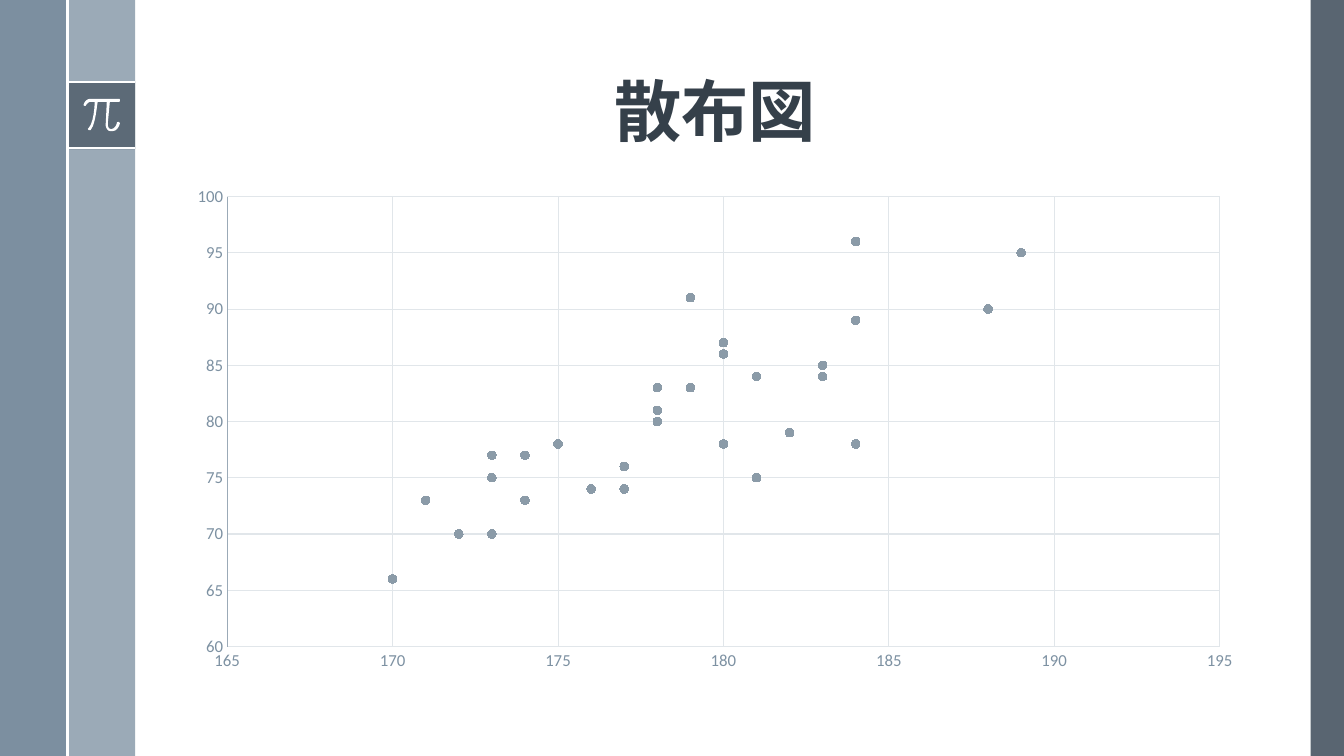
from dataclasses import dataclass

import pptx
import pptx.chart.data
import pptx.dml.color
import pptx.enum.chart
import pptx.enum.shapes
import pptx.enum.text
import pptx.oxml
import pptx.oxml.ns
import pptx.util
from pptx.util import Inches, Pt


@dataclass(frozen=True)
class Theme:
    title_font: str = "Noto Sans CJK JP"
    chart_font: str = "Calibri"
    title_size: int = 48
    label_size: int = 12
    marker_size: int = 6
    white: str = "FFFFFF"
    slate: str = "475562"
    steel: str = "6A8093"
    mist: str = "9BAAB7"
    title: str = "35404A"
    label: str = "7D91A2"
    grid: str = "E1E6EA"
    marker: str = "8B9BA8"


THEME = Theme()
BAND = 0.67
CONTENT_LEFT, CONTENT_WIDTH = 1.74, 10.7

POINTS = [
    (179, 91), (183, 84), (177, 74), (173, 75), (178, 83), (184, 78),
    (189, 95), (176, 74), (183, 85), (181, 75), (184, 96), (184, 89),
    (174, 77), (177, 76), (173, 70), (188, 90), (182, 79), (181, 84),
    (180, 86), (173, 77), (178, 80), (180, 78), (180, 87), (171, 73),
    (178, 81), (175, 78), (170, 66), (179, 83), (174, 73), (172, 70),
]

# Each step holds the points after the current one: one for a straight
# edge, three for a cubic curve (two controls and an end).
PI_START = (1.18, 0.98)
PI_STEPS = [
    [(0.9, 0.98)],
    [(0.85, 0.98), (0.83, 1.03), (0.83, 1.04)],
    [(0.83, 1.04), (0.83, 1.05), (0.84, 1.05)],
    [(0.85, 1.05)],
    [(0.85, 1.05), (0.87, 1.01), (0.9, 1.01)],
    [(0.94, 1.01)],
    [(0.94, 1.05), (0.93, 1.22), (0.88, 1.27)],
    [(0.87, 1.28), (0.87, 1.28), (0.88, 1.29)],
    [(0.88, 1.29), (0.89, 1.29), (0.9, 1.29)],
    [(0.95, 1.23), (0.96, 1.05), (0.97, 1.01)],
    [(1.06, 1.01)],
    [(1.05, 1.22)],
    [(1.05, 1.22), (1.04, 1.26), (1.07, 1.29)],
    [(1.08, 1.3), (1.09, 1.3), (1.1, 1.3)],
    [(1.11, 1.3), (1.11, 1.3), (1.12, 1.3)],
    [(1.17, 1.3), (1.19, 1.23), (1.19, 1.22)],
    [(1.19, 1.22), (1.18, 1.21), (1.18, 1.21)],
    [(1.17, 1.21), (1.16, 1.21), (1.16, 1.22)],
    [(1.16, 1.22), (1.15, 1.27), (1.11, 1.28)],
    [(1.1, 1.28), (1.09, 1.28), (1.08, 1.27)],
    [(1.07, 1.26), (1.07, 1.23), (1.07, 1.22)],
    [(1.09, 1.01)],
    [(1.18, 1.01)],
    [(1.19, 1.01), (1.19, 1), (1.19, 1)],
    [(1.19, 0.99), (1.19, 0.98), (1.18, 0.98)],
]


def rgb(color):
    return pptx.dml.color.RGBColor.from_string(color)


def paint(shape, color, opacity=100):
    shape.shadow.inherit = False
    shape.fill.solid()
    shape.fill.fore_color.rgb = rgb(color)
    shape.line.fill.background()
    if opacity < 100:
        srgb = shape.fill._xPr.find(".//" + pptx.oxml.ns.qn("a:srgbClr"))
        alpha = srgb.makeelement(pptx.oxml.ns.qn("a:alpha"), {"val": str(opacity * 1000)})
        srgb.append(alpha)


def add_band(slide, left, top, width, height, color, opacity=100):
    band = slide.shapes.add_shape(
        pptx.enum.shapes.MSO_SHAPE.RECTANGLE,
        Inches(left), Inches(top), Inches(width), Inches(height))
    paint(band, color, opacity)


def add_rule(slide, *ends):
    rule = slide.shapes.add_connector(
        pptx.enum.shapes.MSO_CONNECTOR.STRAIGHT, *map(Inches, ends))
    rule.line.color.rgb = rgb(THEME.white)
    rule.line.width = Pt(1.5)
    properties = rule._element.spPr
    properties.append(properties.makeelement(pptx.oxml.ns.qn("a:effectLst"), {}))


def curve_points(p0, p1, p2, p3, pieces=6):
    """Sample a cubic curve, leaving out its first point."""
    for step in range(1, pieces + 1):
        t = step / pieces
        u = 1 - t
        weights = (u**3, 3 * u * u * t, 3 * u * t * t, t**3)
        yield tuple(sum(w * c for w, c in zip(weights, axis))
                    for axis in zip(p0, p1, p2, p3))


def add_pi(slide):
    outline = [PI_START]
    for step in PI_STEPS:
        outline.extend(step if len(step) == 1 else curve_points(outline[-1], *step))
    builder = slide.shapes.build_freeform(
        Inches(PI_START[0]), Inches(PI_START[1]))
    builder.add_line_segments([(Inches(x), Inches(y)) for x, y in outline[1:]])
    paint(builder.convert_to_shape(), THEME.white)


def add_title(slide, wording):
    title = slide.shapes.title
    title.left, title.top = Inches(CONTENT_LEFT), Inches(0.19)
    title.width, title.height = Inches(CONTENT_WIDTH), Inches(1.36)
    frame = title.text_frame
    frame.text = wording
    frame.vertical_anchor = pptx.enum.text.MSO_ANCHOR.BOTTOM
    paragraph = frame.paragraphs[0]
    paragraph.alignment = pptx.enum.text.PP_ALIGN.CENTER
    paragraph.line_spacing = 0.9
    font = paragraph.runs[0].font
    font.name, font.size, font.bold = THEME.title_font, Pt(THEME.title_size), True
    font.color.rgb = rgb(THEME.title)
    latin = font._element.find(pptx.oxml.ns.qn("a:latin"))
    latin.addnext(latin.makeelement(
        pptx.oxml.ns.qn("a:ea"), {"typeface": THEME.title_font}))


def style_axis(axis, low, high, line_color, line_width):
    axis.minimum_scale, axis.maximum_scale, axis.major_unit = low, high, 5
    axis.major_tick_mark = axis.minor_tick_mark = pptx.enum.chart.XL_TICK_MARK.NONE
    axis.format.line.color.rgb = rgb(line_color)
    axis.format.line.width = Pt(line_width)
    axis.has_major_gridlines = True
    axis.major_gridlines.format.line.color.rgb = rgb(THEME.grid)
    axis.major_gridlines.format.line.width = Pt(0.75)
    axis.tick_labels.number_format = "General"
    axis.tick_labels.number_format_is_linked = False


def place_plot(chart, **fractions):
    """Fix the inner plot area as fractions of the chart."""
    plot_area = chart._chartSpace.chart.plotArea
    for layout in plot_area.findall(pptx.oxml.ns.qn("c:layout")):
        plot_area.remove(layout)
    settings = {"layoutTarget": "inner", "xMode": "edge", "yMode": "edge", **fractions}
    children = "".join(f'<c:{key} val="{val}"/>' for key, val in settings.items())
    plot_area.insert(0, pptx.oxml.parse_xml(
        f'<c:layout {pptx.oxml.ns.nsdecls("c")}>'
        f"<c:manualLayout>{children}</c:manualLayout></c:layout>"))


def add_scatter(slide):
    data = pptx.chart.data.XyChartData()
    measurements = data.add_series("Series 1")
    for x, y in POINTS:
        measurements.add_data_point(x, y)
    chart = slide.shapes.add_chart(
        pptx.enum.chart.XL_CHART_TYPE.XY_SCATTER,
        Inches(CONTENT_LEFT), Inches(1.75), Inches(CONTENT_WIDTH), Inches(5), data).chart
    chart.has_title = chart.has_legend = False
    chart.font.name, chart.font.size = THEME.chart_font, Pt(THEME.label_size)
    chart.font.color.rgb = rgb(THEME.label)
    style_axis(chart.category_axis, 165, 195, THEME.grid, 1)
    style_axis(chart.value_axis, 60, 100, THEME.mist, 0.75)
    place_plot(chart, x=0.048, y=0.04, w=0.92, h=0.893)

    plot = chart.plots[0]
    plot.vary_by_categories = False
    series = plot.series[0]
    series.format.line.fill.background()
    series.marker.style = pptx.enum.chart.XL_MARKER_STYLE.CIRCLE
    series.marker.size = THEME.marker_size
    series.marker.format.fill.solid()
    series.marker.format.fill.fore_color.rgb = rgb(THEME.marker)
    series.marker.format.line.fill.background()


def main():
    deck = pptx.Presentation()
    deck.slide_width, deck.slide_height = Inches(13.33), Inches(7.5)
    slide = deck.slides.add_slide(deck.slide_layouts[5])
    add_band(slide, 13, 0, 0.33, 7.5, THEME.slate, 90)
    add_band(slide, BAND, 0, BAND, 7.5, THEME.mist)
    add_band(slide, 0, 0, BAND, 7.5, THEME.steel, 88)
    add_band(slide, BAND, 0.81, BAND, BAND, THEME.slate, 75)
    for y in (0.81, 1.47):
        add_rule(slide, BAND, y, 2 * BAND, y)
    add_pi(slide)
    add_rule(slide, BAND, 0, BAND, 7.5)
    add_title(slide, "散布図")
    add_scatter(slide)
    deck.save("out.pptx")


if __name__ == "__main__":
    main()
